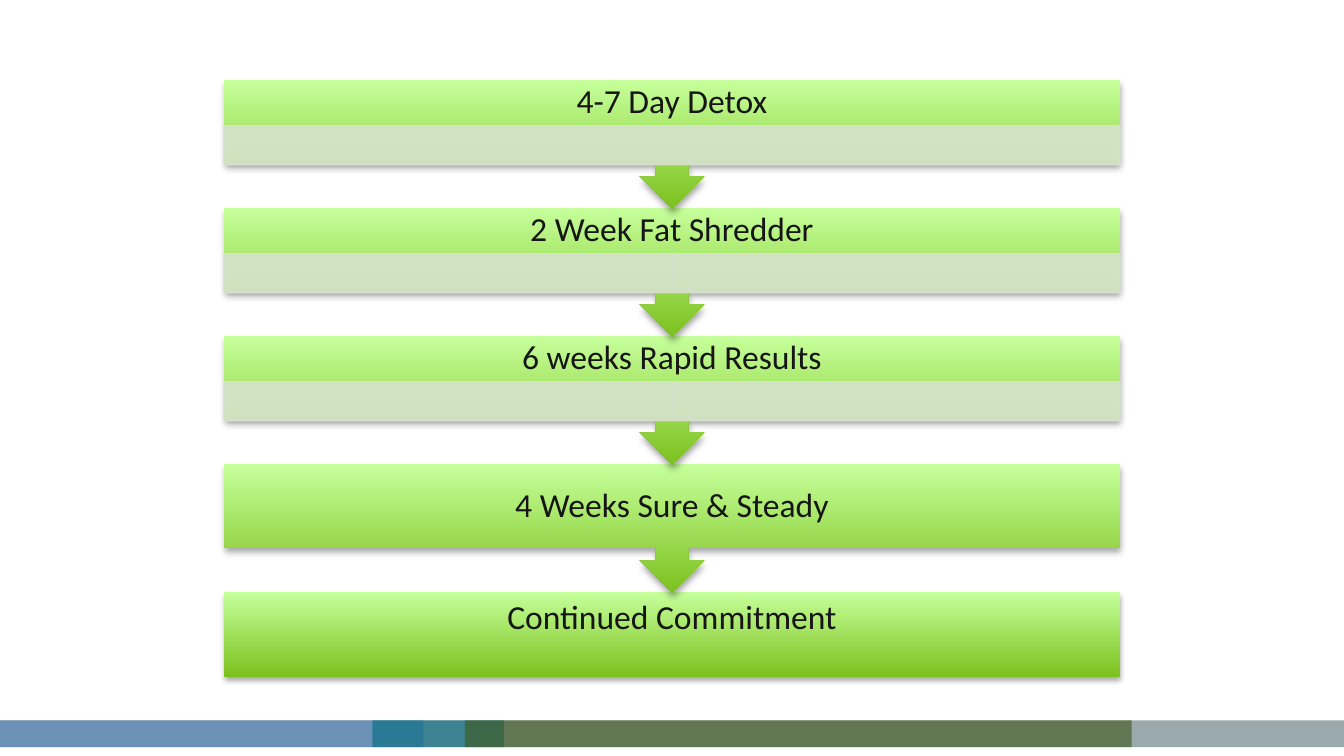
from lxml import etree
from pptx import Presentation
from pptx.dml.color import RGBColor
from pptx.enum import shapes, text
from pptx.oxml import parse_xml
from pptx.oxml.ns import nsdecls, qn
from pptx.util import Inches, Pt

# The steps fill two thirds of the page width, with the third one starting at 2.5
WIDTH = 10 * 2 / 3
LEFT = (10 - WIDTH) / 2
PITCH = 20 / 21
TOP = 2.5 - 2 * PITCH
STEP_HEIGHT, CALLOUT_HEIGHT = 0.63, 0.96
HEADING_HEIGHT, STRIP_HEIGHT = 0.34, 0.29


def colour(value):
    return RGBColor.from_string(value)


def add_block(page, preset, bounds, fill=None, opacity=100):
    """Add a shape: a see-through plain fill, or the green gradient with a shadow."""
    block = page.shapes.add_shape(preset, *[Inches(length) for length in bounds])
    block.shadow.inherit = False
    block.line.fill.background()
    if fill:
        block.fill.solid()
        block.fill.fore_color.rgb = colour(fill)
        tint = block.fill._xPr.find(".//" + qn("a:srgbClr"))
        etree.SubElement(tint, qn("a:alpha"), val=str(opacity * 1000))
    else:
        block.fill.gradient()
        block.fill.gradient_angle = 90
        for stop, shade in zip(block.fill.gradient_stops, ("7DC11E", "C6FF9B")):
            stop.color.rgb = colour(shade)
        effects = block._element.spPr.find(qn("a:effectLst"))
        effects.append(parse_xml(
            f'<a:outerShdw {nsdecls("a")} blurRad="{Pt(3.1)}" dist="{Pt(1.8)}" '
            'dir="5400000" rotWithShape="0"><a:srgbClr val="000000">'
            '<a:alpha val="35000"/></a:srgbClr></a:outerShdw>'))
    return block


deck = Presentation()
deck.slide_width = Inches(10)
deck.slide_height = deck.slide_width * 9 // 16
page = deck.slides.add_slide(deck.slide_layouts[6])
rectangle = shapes.MSO_SHAPE.RECTANGLE
callout = shapes.MSO_SHAPE.DOWN_ARROW_CALLOUT

# Overlapping footer bands
bands = [(-0.25, 10.5, "567176"), (0, 3.15, "4F81BD"),
         (2.77, 0.98, "006B80"), (3.46, 4.96, "3D5718")]
for left, width, fill in bands:
    add_block(page, rectangle, (left, 5.36, width, 0.2), fill, 60)

# Steps: label, label height, bottom inset, number of pale strips below the label
steps = [("4-7 Day Detox", HEADING_HEIGHT, 0.14, 1),
         ("2 Week Fat Shredder", HEADING_HEIGHT, 0.14, 2),
         ("6 weeks Rapid Results", HEADING_HEIGHT, 0.14, 2),
         ("4 Weeks Sure & Steady", STEP_HEIGHT, 0.14, 0),
         ("Continued Commitment", STEP_HEIGHT, 0.38, 0)]

# Drawn from the bottom up, so that each arrow lies over the next step
for index, (label, height, bottom_inset, strips) in reversed(list(enumerate(steps))):
    top = TOP + index * PITCH
    if index == len(steps) - 1:
        add_block(page, rectangle, (LEFT, top, WIDTH, STEP_HEIGHT))
    else:
        add_block(page, callout, (LEFT, top, WIDTH, CALLOUT_HEIGHT))

    # Label
    box = page.shapes.add_textbox(Inches(LEFT), Inches(top), Inches(WIDTH), Inches(height))
    frame = box.text_frame
    frame.word_wrap = True
    frame.vertical_anchor = text.MSO_ANCHOR.MIDDLE
    frame.margin_left = frame.margin_right = frame.margin_top = Inches(0.14)
    frame.margin_bottom = Inches(bottom_inset)
    para = frame.paragraphs[0]
    para.text = label
    para.alignment = text.PP_ALIGN.CENTER
    para.line_spacing = 0.9
    para.font.name, para.font.size = "Calibri", Pt(18)
    para.font.color.rgb = colour("161616")

    # Pale strips
    for column in range(strips):
        width = WIDTH / strips
        strip = add_block(page, rectangle, (LEFT + column * width, top + HEADING_HEIGHT,
                                            width, STRIP_HEIGHT), "D7E3CE", 90)
        strip.line.color.rgb = colour("D7E3CE")
        strip.line.width = Pt(0.75)
        edge = strip.line._ln.find(".//" + qn("a:srgbClr"))
        etree.SubElement(edge, qn("a:alpha"), val="90000")

deck.save("out.pptx")
